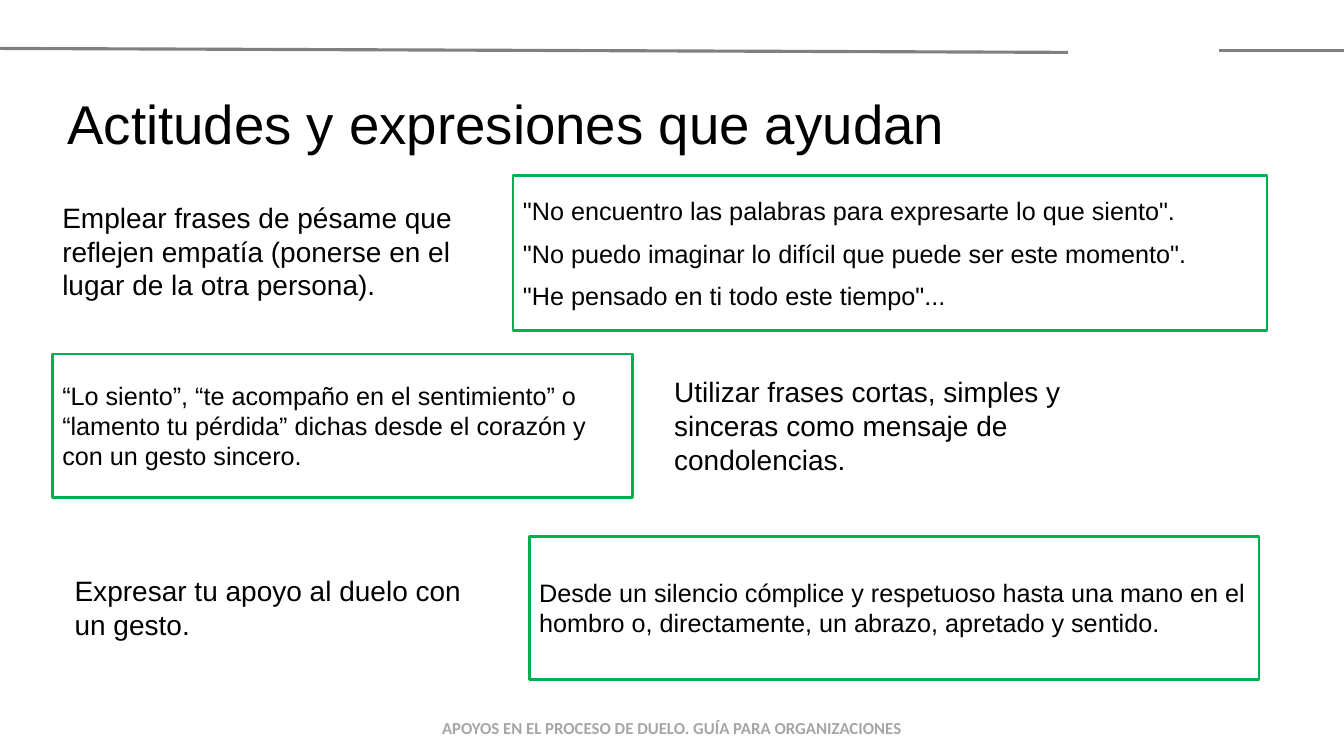
import dataclasses

import pptx
import pptx.dml.color
import pptx.enum.shapes
import pptx.enum.text
import pptx.oxml.ns
import pptx.util
from lxml import etree

Cm = pptx.util.Cm
Pt = pptx.util.Pt
ALIGN = pptx.enum.text.PP_ALIGN
ANCHOR = pptx.enum.text.MSO_ANCHOR
AUTO_SIZE = pptx.enum.text.MSO_AUTO_SIZE


def rgb(value):
    return pptx.dml.color.RGBColor.from_string(value)


@dataclasses.dataclass(frozen=True)
class Theme:
    background: str = "FFFFFF"
    text: str = "000000"
    rule: str = "808080"
    frame: str = "00B050"
    footer: str = "A6A6A6"
    body_font: str = "Arial"
    footer_font: str = "Calibri"
    title_size: int = 39
    advice_size: int = 20
    example_size: int = 18
    footer_size: int = 12
    rule_width: float = 2.25
    frame_width: float = 2
    quote_gap: int = 9


class SlideBuilder:
    def __init__(self, slide, theme):
        self.slide = slide
        self.theme = theme
        fill = slide.background.fill
        fill.solid()
        fill.fore_color.rgb = rgb(theme.background)

    def add_text(self, shape, paragraphs, size, color=None, align=ALIGN.LEFT, **font_format):
        """Fill a shape with paragraphs, separated by the quote gap."""
        frame = shape.text_frame
        frame.word_wrap = True
        font_values = {"name": self.theme.body_font, "size": Pt(size), **font_format}
        for index, text in enumerate(paragraphs):
            paragraph = frame.add_paragraph() if index else frame.paragraphs[0]
            paragraph.alignment = align
            if index:
                paragraph.space_before = Pt(self.theme.quote_gap)
            run = paragraph.add_run()
            run.text = text
            for name, value in font_values.items():
                setattr(run.font, name, value)
            run.font.color.rgb = rgb(color or self.theme.text)

    def text_box(self, box):
        return self.slide.shapes.add_textbox(*map(Cm, box))

    def rule(self, *ends):
        """Draw a header line from (x, y) to (x, y)."""
        connector = self.slide.shapes.add_connector(
            pptx.enum.shapes.MSO_CONNECTOR.STRAIGHT, *map(Cm, ends))
        connector.line.color.rgb = rgb(self.theme.rule)
        connector.line.width = Pt(self.theme.rule_width)
        etree.SubElement(connector._element.spPr, pptx.oxml.ns.qn("a:effectLst"))

    def title(self, box, text):
        shape = self.text_box(box)
        shape.text_frame.vertical_anchor = ANCHOR.MIDDLE
        self.add_text(shape, [text], self.theme.title_size, align=ALIGN.CENTER)

    def advice(self, box, text):
        shape = self.text_box(box)
        self.add_text(shape, [text], self.theme.advice_size)
        shape.text_frame.auto_size = AUTO_SIZE.SHAPE_TO_FIT_TEXT

    def example(self, box, paragraphs):
        """Add a green frame with phrases or gestures that help."""
        shape = self.slide.shapes.add_shape(
            pptx.enum.shapes.MSO_SHAPE.RECTANGLE, *map(Cm, box))
        shape.shadow.inherit = False
        shape.fill.background()
        shape.line.color.rgb = rgb(self.theme.frame)
        shape.line.width = Pt(self.theme.frame_width)
        shape.text_frame.vertical_anchor = ANCHOR.MIDDLE
        self.add_text(shape, paragraphs, self.theme.example_size)

    def footer(self, box, text):
        shape = self.text_box(box)
        self.add_text(shape, [text], self.theme.footer_size, self.theme.footer,
                      ALIGN.CENTER, name=self.theme.footer_font, bold=True)
        shape.text_frame.auto_size = AUTO_SIZE.SHAPE_TO_FIT_TEXT


ADVICE = [
    ((1.32, 4.93, 11, 2.82),
     "Emplear frases de pésame que reflejen empatía (ponerse en el lugar de la otra persona)."),
    ((16.74, 9.32, 11.4, 2.82),
     "Utilizar frases cortas, simples y sinceras como mensaje de condolencias."),
    ((1.63, 14.33, 10.44, 1.96), "Expresar tu apoyo al duelo con un gesto."),
]
EXAMPLES = [
    ((12.93, 4.42, 19, 3.91), [
        '"No encuentro las palabras para expresarte lo que siento".',
        '"No puedo imaginar lo difícil que puede ser este momento".',
        '"He pensado en ti todo este tiempo"...',
    ]),
    ((1.32, 8.92, 14.63, 3.61), [
        "“Lo siento”, “te acompaño en el sentimiento” o “lamento tu pérdida” "
        "dichas desde el corazón y con un gesto sincero.",
    ]),
    ((13.34, 13.51, 18.39, 3.61), [
        "Desde un silencio cómplice y respetuoso hasta una mano en el hombro o, "
        "directamente, un abrazo, apretado y sentido.",
    ]),
]


def main():
    presentation = pptx.Presentation()
    presentation.slide_width = Cm(33.87)
    presentation.slide_height = Cm(19.05)
    slide = presentation.slides.add_slide(presentation.slide_layouts[6])
    builder = SlideBuilder(slide, Theme())

    builder.rule(0, 1.22, 26.92, 1.32)
    builder.rule(30.73, 1.27, 33.87, 1.27)
    builder.footer((0, 17.96, 33.87, 0.76),
                   "APOYOS EN EL PROCESO DE DUELO. GUÍA PARA ORGANIZACIONES")
    builder.title((1.32, 1.9, 22.86, 2.36), "Actitudes y expresiones que ayudan")
    for box, text in ADVICE:
        builder.advice(box, text)
    for box, paragraphs in EXAMPLES:
        builder.example(box, paragraphs)

    presentation.save("out.pptx")


if __name__ == "__main__":
    main()
